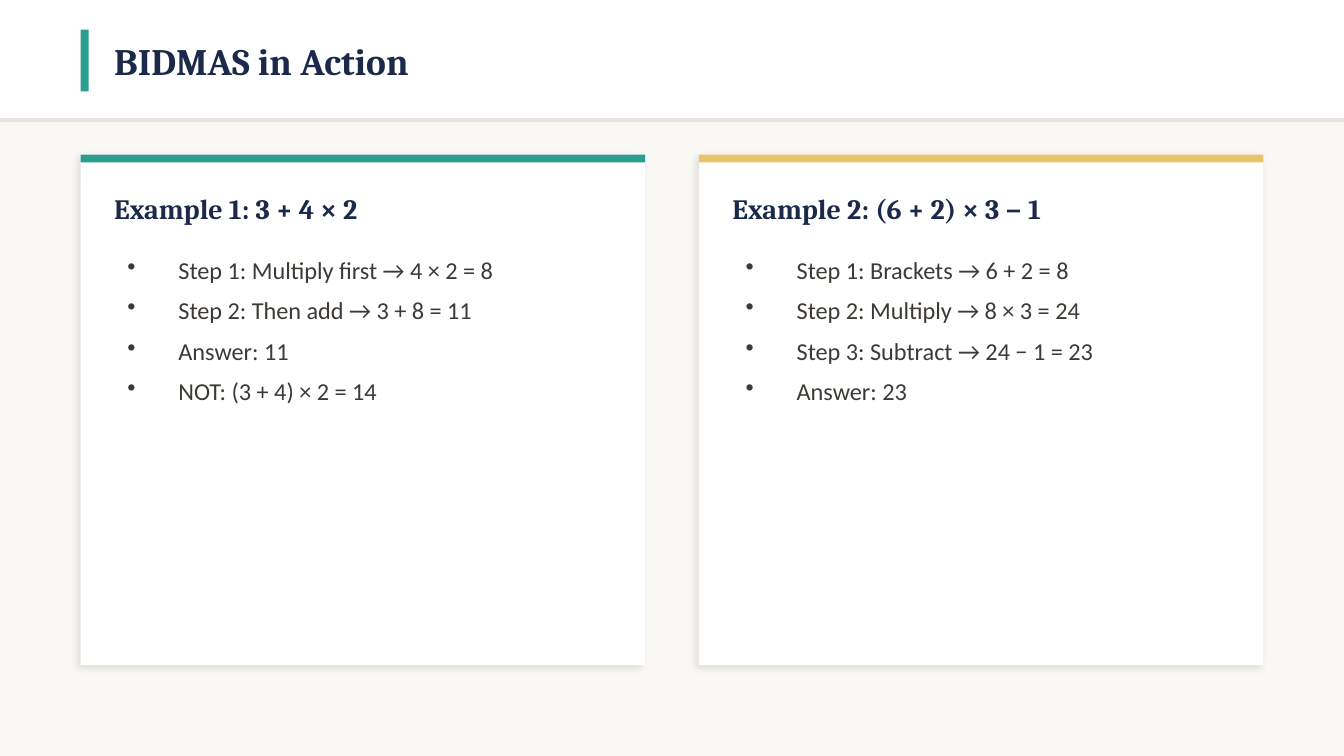
"""Build the slide with two worked examples of the order of operations."""
from lxml import etree
from pptx import Presentation
from pptx.dml.color import RGBColor
from pptx.enum.shapes import MSO_SHAPE
from pptx.enum.text import MSO_ANCHOR, MSO_AUTO_SIZE, PP_ALIGN
from pptx.oxml import parse_xml
from pptx.oxml.ns import nsdecls, qn
from pptx.util import Inches, Pt

RECT = MSO_SHAPE.RECTANGLE
MIDDLE = MSO_ANCHOR.MIDDLE
FIXED = MSO_AUTO_SIZE.NONE
LEFT = PP_ALIGN.LEFT
INK = {"page": "FAF8F5", "white": "FFFFFF", "rule": "E5E2DC", "teal": "2A9D8F",
       "gold": "E9C46A", "navy": "1B2A4A", "text": "3D3A36"}
CELL = Inches(0.1)
COLS, ROWS = 100, 56.25
EDGE, GAP, PAD = 6, 4, 2.5
WIDE = (COLS - 2 * EDGE - GAP) / 2
TOP, TALL = 11.5, 38
SHADOW = (
    f'<a:outerShdw {nsdecls("a")} blurRad="{Pt(4)}" dist="{Pt(2)}" dir="8100000" '
    'algn="bl" rotWithShape="0"><a:srgbClr val="000000"><a:alpha val="10000"/>'
    '</a:srgbClr></a:outerShdw>')
CARDS = [
    ("teal", "Example 1: 3 + 4 × 2",
     ["Step 1: Multiply first → 4 × 2 = 8", "Step 2: Then add → 3 + 8 = 11",
      "Answer: 11", "NOT: (3 + 4) × 2 = 14"]),
    ("gold", "Example 2: (6 + 2) × 3 − 1",
     ["Step 1: Brackets → 6 + 2 = 8", "Step 2: Multiply → 8 × 3 = 24",
      "Step 3: Subtract → 24 − 1 = 23", "Answer: 23"]),
]

deck = Presentation()
deck.slide_width, deck.slide_height = int(COLS * CELL), int(ROWS * CELL)
slide = deck.slides.add_slide(deck.slide_layouts[5])
slide.background.fill.solid()
slide.background.fill.fore_color.rgb = RGBColor.from_string(INK["page"])


def block(col, row, wide, tall, ink):
    """Add a plain filled rectangle placed in grid cells."""
    shape = slide.shapes.add_shape(RECT, *(int(n * CELL) for n in (col, row, wide, tall)))
    shape.shadow.inherit = False
    shape.fill.solid()
    shape.fill.fore_color.rgb = RGBColor.from_string(INK[ink])
    shape.line.fill.background()
    return shape


def heading(shape, col, row, wide, tall, text, size):
    """Place a shape in grid cells and give it heading text."""
    shape.left, shape.top, shape.width, shape.height = (
        int(n * CELL) for n in (col, row, wide, tall))
    frame = shape.text_frame
    frame.text = text
    frame.word_wrap, frame.auto_size, frame.vertical_anchor = True, FIXED, MIDDLE
    frame.margin_left = frame.margin_right = frame.margin_top = frame.margin_bottom = 0
    para = frame.paragraphs[0]
    para.alignment = LEFT
    para.font.name, para.font.size, para.font.bold = "Cambria", Pt(size), True
    para.font.color.rgb = RGBColor.from_string(INK["navy"])


block(0, 0, COLS, 9, "white")
block(0, 8.8, COLS, 0.3, "rule")
block(EDGE, 2.2, 0.6, 4.6, "teal")
title = slide.shapes.title
heading(title, EDGE + PAD, 1.5, 85, 6, "BIDMAS in Action", 20)
title.element.getparent().append(title.element)

for i, (ink, head, steps) in enumerate(CARDS):
    col = EDGE + i * (WIDE + GAP)
    card = block(col, TOP, WIDE, TALL, "white")
    card.element.spPr.find(qn("a:effectLst")).append(parse_xml(SHADOW))
    block(col, TOP, WIDE, 0.6, ink)
    heading(slide.shapes.add_textbox(0, 0, 0, 0), col + PAD, TOP + 1.5,
            WIDE - 2 * PAD, 5, head, 15)
    body = slide.shapes.add_textbox(*(
        int(n * CELL) for n in (col + PAD, TOP + 7, WIDE - 2 * PAD, 29)))
    frame = body.text_frame
    frame.word_wrap = True
    frame.text = "\n".join(steps)
    for para in frame.paragraphs:
        props = para._p.get_or_add_pPr()
        props.set("marL", str(Inches(0.38)))
        props.set("indent", str(-Inches(0.38)))
        para.space_after = Pt(6)
        etree.SubElement(props, qn("a:buSzPct"), val="100000")
        etree.SubElement(props, qn("a:buChar"), char="•")
        para.font.name, para.font.size = "Calibri", Pt(13)
        para.font.color.rgb = RGBColor.from_string(INK["text"])

deck.save("out.pptx")
